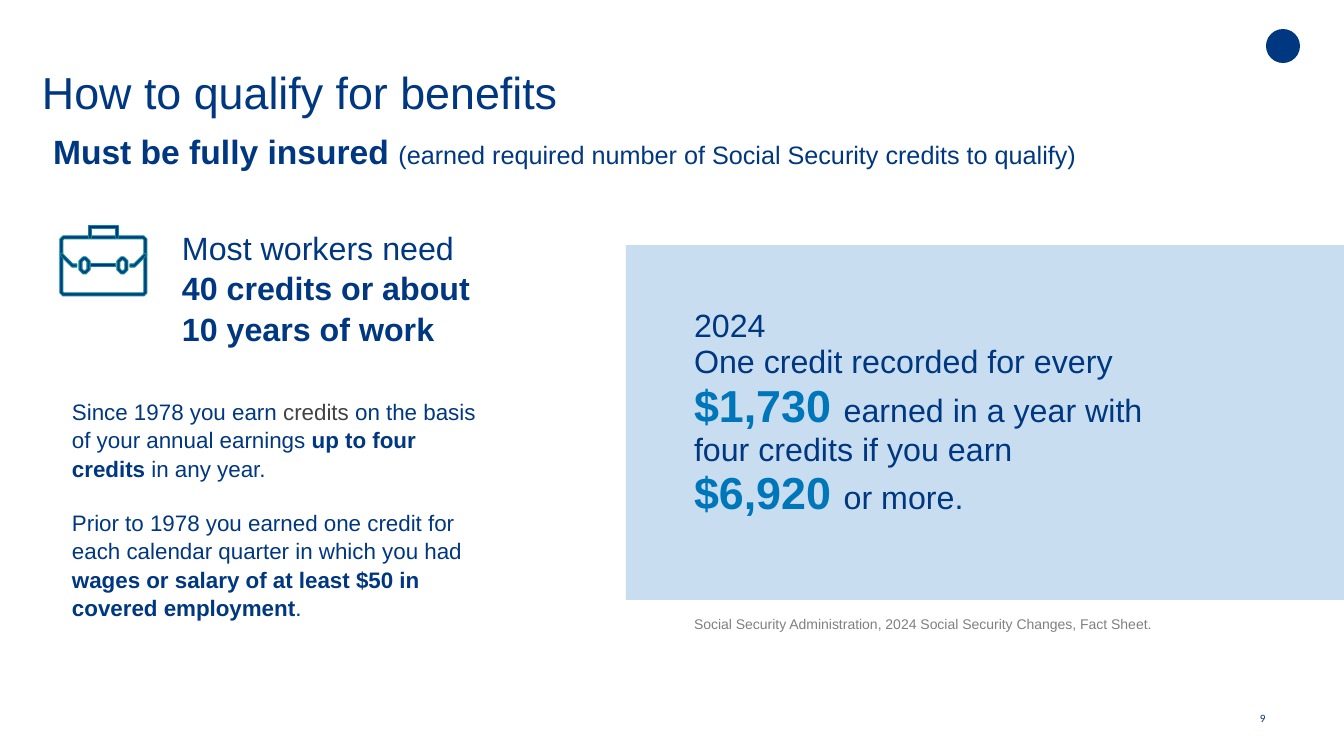
from lxml.etree import SubElement
from pptx import Presentation
from pptx.dml.color import RGBColor
from pptx.enum.shapes import MSO_SHAPE as Form
from pptx.enum.text import MSO_ANCHOR as Anchor, MSO_AUTO_SIZE as Fit, PP_ALIGN as Align
from pptx.oxml.ns import qn
from pptx.util import Pt

WIDE, HIGH = 1344, 756
SCALE = 12192000 / WIDE
NAVY, BLUE, TEAL = "003781", "0076BA", "0F898F"
PALE, DARK, GREY = "C8DEF0", "424242", "808080"


def px(n):
    return round(n * SCALE)


def color(code):
    return RGBColor.from_string(code)


def place(shape, box):
    shape.left, shape.top, shape.width, shape.height = map(px, box)


def paint(shape, fill, line=None):
    shape.shadow.inherit = False
    shape.fill.solid()
    shape.fill.fore_color.rgb = color(fill)
    if line:
        shape.line.color.rgb = color(line)
        shape.line.width = Pt(0.75)
    else:
        shape.line.fill.background()


def frame(shape, anchor=Anchor.TOP, inset=(10, 5)):
    text = shape.text_frame
    text.word_wrap = True
    text.auto_size = Fit.NONE
    text.vertical_anchor = anchor
    text.margin_left = text.margin_right = px(inset[0])
    text.margin_top = text.margin_bottom = px(inset[1])
    return text


def label(slide, box, anchor=Anchor.TOP, inset=(10, 5)):
    return frame(slide.shapes.add_textbox(*map(px, box)), anchor, inset)


def write(par, runs, space=1.0, before=0, after=0):
    par.alignment = Align.LEFT
    par.line_spacing = space
    par.space_before, par.space_after = Pt(before), Pt(after)
    for words, size, code, bold in runs:
        if words == "\n":
            par.add_line_break()
            continue
        run = par.add_run()
        run.text = words
        font = run.font
        font.name, font.size, font.bold = "Arial", Pt(size), bold
        font.color.rgb = color(code)


def head(slide, box):
    x, y, w, h = box
    title = slide.shapes.title
    place(title, (x, y, w, 90))
    text = frame(title, Anchor.BOTTOM, (0, 0))
    write(text.paragraphs[0], [("How to qualify for benefits", 32, NAVY, False)], 0.9)

    body = slide.placeholders[1]
    place(body, (x + 1, y + 101, 1260, h - 101))
    par = frame(body).paragraphs[0]
    write(par, [
        ("Must be fully insured ", 24, NAVY, True),
        ("(earned required number of Social Security credits to qualify)", 18, NAVY, False),
    ], 0.9, before=6)
    props = par._p.get_or_add_pPr()
    props.set("marL", "0")
    props.set("indent", "0")
    SubElement(props, qn("a:buNone"))


def loop(x, y, w, h, cut):
    r, b = x + w, y + h
    return [(x + cut, y), (r - cut, y), (r, y + cut), (r, b - cut),
            (r - cut, b), (x + cut, b), (x, b - cut), (x, y + cut)]


def ring(x, y, w, h, cut):
    return [loop(x, y, w, h, cut), loop(x + 3, y + 3, w - 6, h - 6, cut - 2)]


def case(slide, box):
    x, y, w, h = box
    strap = [(0, 29), (2, 27), (13, 38), (17, 38), (17, 41), (12, 41)]
    parts = [
        ring(0, 10, w, h - 10, 3),
        [[(29, 13), (29, 0), (59, 0), (59, 13), (56, 13), (56, 3), (32, 3), (32, 13)]],
        ring(19, 31, 11, 17, 4),
        ring(w - 30, 31, 11, 17, 4),
        [strap],
        [[(w - a, b) for a, b in strap]],
        [[(31, 38), (w - 31, 38), (w - 31, 41), (31, 41)]],
    ]
    group = slide.shapes.add_group_shape().shapes
    for first, *rest in parts:
        pen = group.build_freeform(*first[0], scale=SCALE)
        pen.add_line_segments(first[1:])
        for path in rest:
            pen.move_to(*path[0])
            pen.add_line_segments(path[1:])
        paint(pen.convert_to_shape(px(x), px(y)), NAVY, TEAL)


def work(slide, box):
    x, y, w, h = box
    case(slide, (x, y + 5, 87, 70))

    need = label(slide, (x + 112, y, 334, 127))
    write(need.paragraphs[0], [
        ("Most workers need ", 23, NAVY, False),
        ("40 credits or about 10 years of work", 23, NAVY, True),
    ], 1.05)

    rules = label(slide, (x + 2, y + 171, w - 2, h - 171))
    write(rules.paragraphs[0], [
        ("Since 1978 you earn ", 16, NAVY, False),
        ("credits", 16, DARK, False),
        (" on the basis of your annual earnings ", 16, NAVY, False),
        ("up to four credits ", 16, NAVY, True),
        ("in any year.", 16, NAVY, False),
    ], 1.05, after=19)
    write(rules.add_paragraph(), [
        ("Prior to 1978 you earned one credit for each calendar quarter in which you had ",
         16, NAVY, False),
        ("wages or salary of at least $50 in covered employment", 16, NAVY, True),
        (".", 16, NAVY, False),
    ], 1.05)


def panel(slide, box):
    x, y, w, h = box
    paint(slide.shapes.add_shape(Form.RECTANGLE, *map(px, box)), PALE)

    facts = label(slide, (x + 58, y + 58, 483, 217))
    write(facts.paragraphs[0], [("2024", 23, NAVY, False)], 0.95)
    write(facts.add_paragraph(), [
        ("One credit recorded for every ", 23, NAVY, False),
        ("$1,730 ", 32, BLUE, True),
        ("earned in a year with four credits if you earn", 23, NAVY, False),
        ("\n", 23, NAVY, False),
        ("$6,920 ", 32, BLUE, True),
        ("or more.", 23, NAVY, False),
    ], 0.95)

    note = label(slide, (x + 58, y + h + 11, 597, 27))
    write(note.paragraphs[0], [
        ("Social Security Administration, 2024 Social Security Changes, Fact Sheet.",
         10, GREY, False),
    ], before=2)


def marks(slide, box):
    x, y, w, h = box
    paint(slide.shapes.add_shape(Form.OVAL, px(x + 6), px(y), px(34), px(34)), NAVY)
    page = label(slide, (x, y + h - 40, w, 40), Anchor.MIDDLE, (0, 6)).paragraphs[0]
    write(page, [("9", 8, NAVY, False)])
    page.runs[0].font.name = "Calibri"


def main():
    deck = Presentation()
    deck.slide_width, deck.slide_height = px(WIDE), px(HIGH)
    slide = deck.slides.add_slide(deck.slide_layouts[1])
    head(slide, (42, 29, 1208, 634))
    work(slide, (60, 221, 431, 399))
    panel(slide, (626, 245, 718, 355))
    marks(slide, (1260, 29, 40, 709))
    deck.save("out.pptx")


if __name__ == "__main__":
    main()
